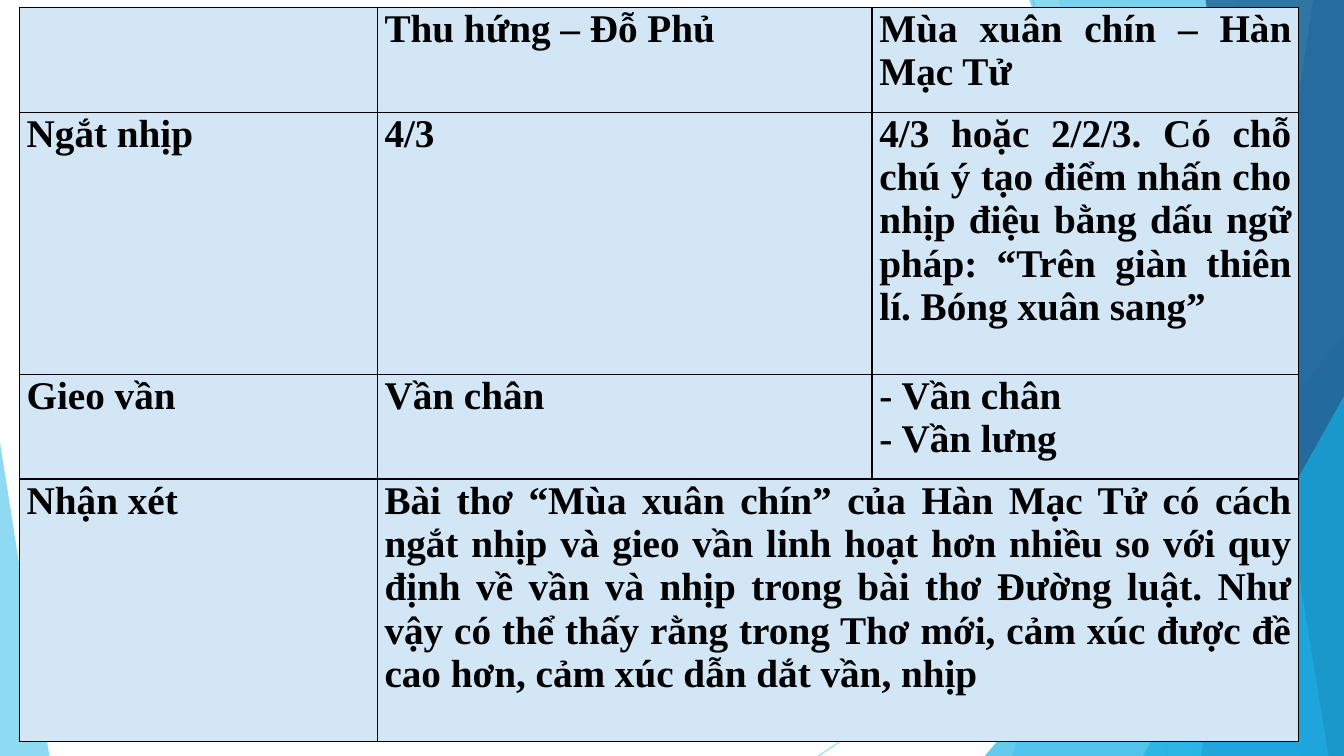
from lxml import etree
from pptx import Presentation
from pptx.dml.color import RGBColor
from pptx.enum.shapes import MSO_CONNECTOR, MSO_SHAPE
from pptx.enum.text import PP_ALIGN
from pptx.oxml.ns import qn
from pptx.util import Pt

STRAIGHT = MSO_CONNECTOR.STRAIGHT
TRIANGLE = MSO_SHAPE.ISOSCELES_TRIANGLE
JUSTIFY = PP_ALIGN.JUSTIFY

WIDE, HIGH = 960, 540
TOP = -0.6
SKY, CYAN, BLUE, NAVY = "5FCBEF", "17B0E4", "2E83C3", "226292"

COLS = [255.6, 353.5, 304.8]
ROWS = [74.9, 187.2, 74.9, 187.2]
CELLS = [
    ["", "Thu hứng – Đỗ Phủ", "Mùa xuân chín – Hàn Mạc Tử"],
    ["Ngắt nhịp", "4/3",
     "4/3 hoặc 2/2/3. Có chỗ chú ý tạo điểm nhấn cho nhịp điệu bằng dấu ngữ "
     "pháp: “Trên giàn thiên lí. Bóng xuân sang”"],
    ["Gieo vần", "Vần chân", "- Vần chân\n- Vần lưng"],
    ["Nhận xét",
     "Bài thơ “Mùa xuân chín” của Hàn Mạc Tử có cách ngắt nhịp và gieo vần "
     "linh hoạt hơn nhiều so với quy định về vần và nhịp trong bài thơ Đường "
     "luật. Như vậy có thể thấy rằng trong Thơ mới, cảm xúc được đề cao hơn, "
     "cảm xúc dẫn dắt vần, nhịp", ""],
]


def color(code):
    return RGBColor.from_string(code)


def paint(fill, code, alpha=100):
    fill.solid()
    fill.fore_color.rgb = color(code)
    if alpha < 100:
        for tone in fill._xPr.iter(qn("a:srgbClr")):
            etree.SubElement(tone, qn("a:alpha"), val=str(alpha * 1000))


def finish(shape, code, alpha):
    shape.shadow.inherit = False
    shape.line.fill.background()
    paint(shape.fill, code, alpha)


def add_line(slide, start, end, code, alpha):
    line = slide.shapes.add_connector(
        STRAIGHT, *[Pt(v) for v in (*start, *end)])
    line.line.width = Pt(0.75)
    paint(line.line.fill, code, alpha)
    etree.SubElement(line._element.spPr, qn("a:effectLst"))


def add_band(slide, top, left, right, code, alpha):
    """Draw a band from the given top edge to the given bottom edge."""
    start, *rest = [(top, TOP), (WIDE, TOP), (right, HIGH), (left, HIGH)]
    pen = slide.shapes.build_freeform(Pt(start[0]), Pt(start[1]))
    pen.add_line_segments([(Pt(x), Pt(y)) for x, y in rest], close=True)
    finish(pen.convert_to_shape(), code, alpha)


def add_peak(slide, box, tip, code, alpha):
    peak = slide.shapes.add_shape(TRIANGLE, *[Pt(v) for v in box])
    peak.adjustments[0] = tip
    finish(peak, code, alpha)


def write(frame, text, size=28, font="Times New Roman", code="000000",
          bold=True, align=JUSTIFY):
    frame.text = text
    for para in frame.paragraphs:
        para.alignment = align
        for run in para.runs:
            run.font.size = Pt(size)
            run.font.name = font
            run.font.bold = bold
            run.font.color.rgb = color(code)


def add_border(cell, code="000000", width=1):
    props = cell._tc.get_or_add_tcPr()
    for side in ("lnL", "lnR", "lnT", "lnB"):
        edge = etree.SubElement(props, qn("a:" + side), w=str(Pt(width)))
        fill = etree.SubElement(edge, qn("a:solidFill"))
        etree.SubElement(fill, qn("a:srgbClr"), val=code)


def add_grid(slide, left, top):
    table = slide.shapes.add_table(
        len(ROWS), len(COLS), Pt(left), Pt(top),
        Pt(sum(COLS)), Pt(sum(ROWS))).table
    for col, width in zip(table.columns, COLS):
        col.width = Pt(width)
    for row, height, texts in zip(table.rows, ROWS, CELLS):
        row.height = Pt(height)
        for cell, text in zip(row.cells, texts):
            cell.margin_left = cell.margin_right = Pt(5.3)
            cell.margin_top = cell.margin_bottom = 0
            add_border(cell)
            paint(cell.fill, "D3E6F5")
            write(cell.text_frame, text)
    table.cell(3, 1).merge(table.cell(3, 2))


def main():
    deck = Presentation()
    deck.slide_width, deck.slide_height = Pt(WIDE), Pt(HIGH)
    slide = deck.slides.add_slide(deck.slide_layouts[6])

    # Thin lines behind the facets
    add_line(slide, (738, 0), (834, HIGH), SKY, 70)
    add_line(slide, (WIDE, 290), (584.6, HIGH), SKY, 70)

    # Facets along the right edge
    add_band(slide, 884, 723, WIDE, SKY, 36)
    add_band(slide, 756, 852, WIDE, SKY, 20)
    add_peak(slide, (703.4, 240, 256.6, 300), 1, CYAN, 66)
    add_band(slide, 735, 929.5, WIDE, CYAN, 50)
    add_band(slide, 938, 858, WIDE, BLUE, 70)
    add_band(slide, 861, 949, WIDE, NAVY, 80)
    add_peak(slide, (816.5, 283, 143.5, 257), 1, CYAN, 66)

    # Facet in the lower left corner
    add_peak(slide, (0, 316, 35.3, 224), 0, SKY, 70)

    # Comparison of the two poems
    add_grid(slide, 13.8, 5.2)
    deck.save("out.pptx")


if __name__ == "__main__":
    main()
